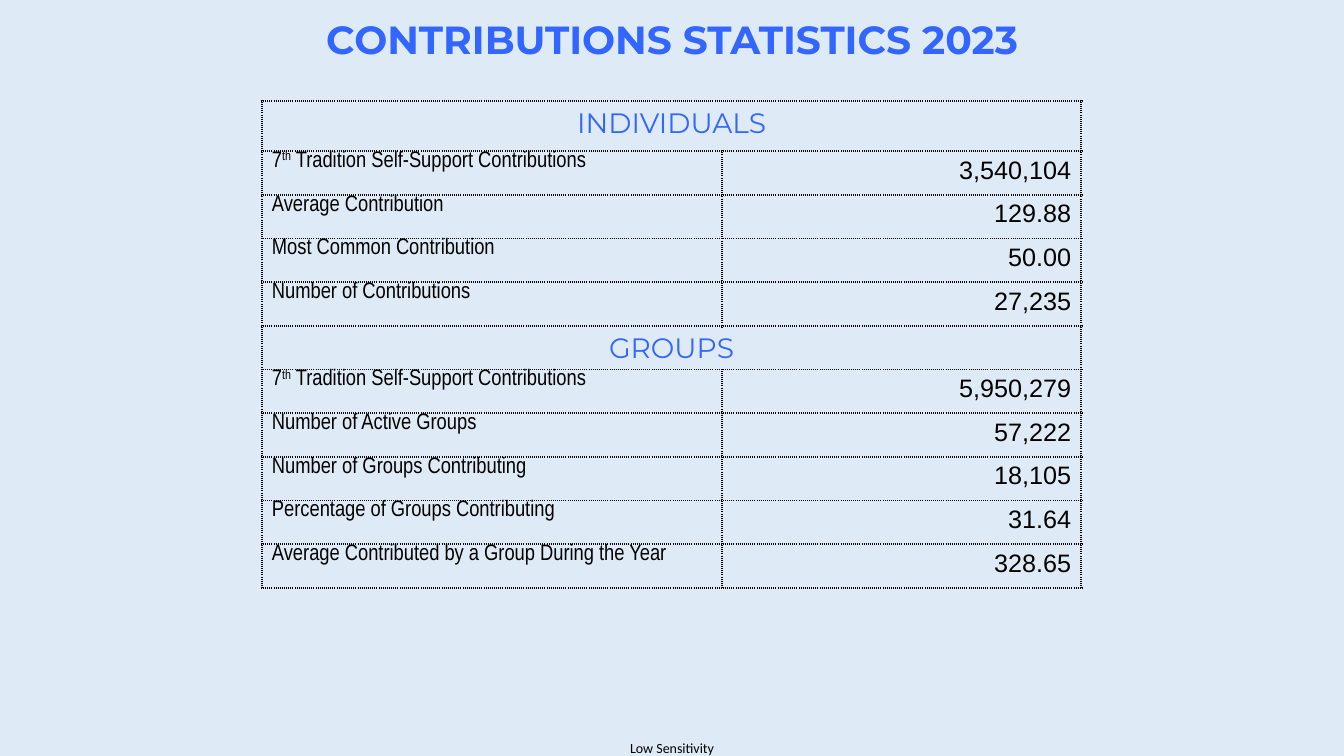
import pptx
import pptx.dml.color
import pptx.enum.text
import pptx.oxml
import pptx.oxml.ns
import pptx.util
from pptx.util import Cm

COLORS = {"background": "DEEBF7", "accent": "3366FF", "ink": "000000"}
ALIGN = pptx.enum.text.PP_ALIGN
SUPPORT = [("7", 0), ("th", 30), (" Tradition Self-Support Contributions", 0)]
SECTIONS = {
    "INDIVIDUALS": [
        (SUPPORT, "3,540,104"),
        ("Average Contribution", "129.88"),
        ("Most Common Contribution", "50.00"),
        ("Number of Contributions", "27,235"),
    ],
    "GROUPS": [
        (SUPPORT, "5,950,279"),
        ("Number of Active Groups", "57,222"),
        ("Number of Groups Contributing", "18,105"),
        ("Percentage of Groups Contributing", "31.64"),
        ("Average Contributed by a Group During the Year", "328.65"),
    ],
}


def rgb(name):
    return pptx.dml.color.RGBColor.from_string(COLORS[name])


class StatisticsSlide:
    HEADING = dict(font="Montserrat", size=20, color="accent", align=ALIGN.CENTER)
    LABEL = dict(font="Arial Narrow", size=16)
    VALUE = dict(font="Arial", size=18, align=ALIGN.RIGHT)

    def __init__(self, deck):
        self.slide = deck.slides.add_slide(deck.slide_layouts[6])
        fill = self.slide.background.fill
        fill.solid()
        fill.fore_color.rgb = rgb("background")

    def add_runs(self, frame, content, font, size, color="ink", align=ALIGN.LEFT, bold=False):
        """Fill a frame with a string or with (text, raise in percent) runs."""
        paragraph = frame.paragraphs[0]
        paragraph.alignment = align
        for text, raised in [(content, 0)] if isinstance(content, str) else content:
            run = paragraph.add_run()
            run.text = text
            run.font.name = font
            run.font.size = pptx.util.Pt(size)
            run.font.bold = bold
            run.font.color.rgb = rgb(color)
            if raised:
                run.font._element.set("baseline", str(raised * 1000))
        return paragraph

    def text(self, content, left, top, width, height, margin=0.25, wrap=True, **style):
        frame = self.slide.shapes.add_textbox(Cm(left), Cm(top), Cm(width), Cm(height)).text_frame
        frame.word_wrap = wrap
        frame.vertical_anchor = pptx.enum.text.MSO_ANCHOR.MIDDLE
        frame.margin_left = frame.margin_right = Cm(margin)
        frame.margin_top = frame.margin_bottom = Cm(margin / 2)
        return self.add_runs(frame, content, **style)

    def dotted_border(self, cell):
        properties = cell._tc.get_or_add_tcPr()
        for side in "LRTB":
            properties.append(pptx.oxml.parse_xml(
                f'<a:ln{side} {pptx.oxml.ns.nsdecls("a")} w="19050">'
                f'<a:solidFill><a:srgbClr val="{COLORS["ink"]}"/></a:solidFill>'
                f'<a:prstDash val="sysDot"/></a:ln{side}>'))

    def table(self, sections, left, top, widths, first_height, row_height):
        count = sum(1 + len(entries) for entries in sections.values())
        table = self.slide.shapes.add_table(
            count, len(widths), Cm(left), Cm(top), Cm(sum(widths)),
            Cm(first_height + row_height * (count - 1))).table
        table.first_row = table.horz_banding = False
        for column, width in zip(table.columns, widths):
            column.width = Cm(width)
        for index, row in enumerate(table.rows):
            row.height = Cm(row_height if index else first_height)
            for cell in row.cells:
                self.dotted_border(cell)
                cell.fill.background()

        index = 0
        for heading, entries in sections.items():
            heading_cell = table.cell(index, 0)
            heading_cell.merge(table.cell(index, 1))
            self.add_runs(heading_cell.text_frame, heading, **self.HEADING)
            for index, (label, value) in enumerate(entries, index + 1):
                label_cell = table.cell(index, 0)
                label_cell.margin_top = label_cell.margin_bottom = 0
                self.add_runs(label_cell.text_frame, label, **self.LABEL)
                self.add_runs(table.cell(index, 1).text_frame, value, **self.VALUE)
            index += 1


def main():
    deck = pptx.Presentation()
    deck.slide_width, deck.slide_height = Cm(33.87), Cm(19.05)
    page = StatisticsSlide(deck)
    page.text("Low Sensitivity", 15.88, 18.62, 2.21, 0.43, margin=0, wrap=False,
              font="Calibri", size=10)
    page.table(SECTIONS, 6.6, 2.54, widths=(11.59, 9.06), first_height=1.27, row_height=1.1)
    title = page.text("CONTRIBUTIONS STATISTICS 2023", 0, 0, 33.87, 2.1,
                      font="Montserrat", size=28, color="accent", align=ALIGN.CENTER, bold=True)
    title.line_spacing = 0.9
    deck.save("out.pptx")


if __name__ == "__main__":
    main()
